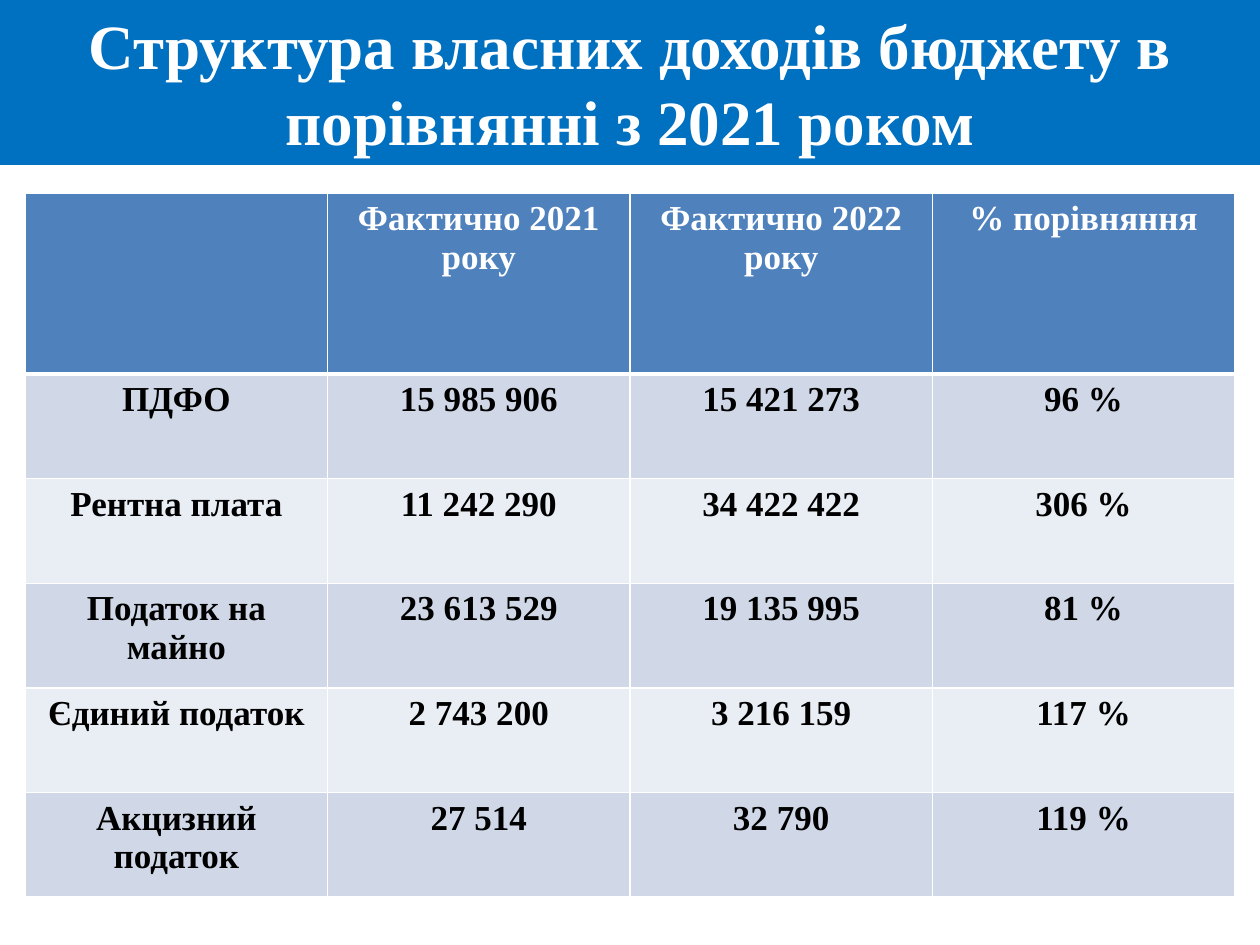
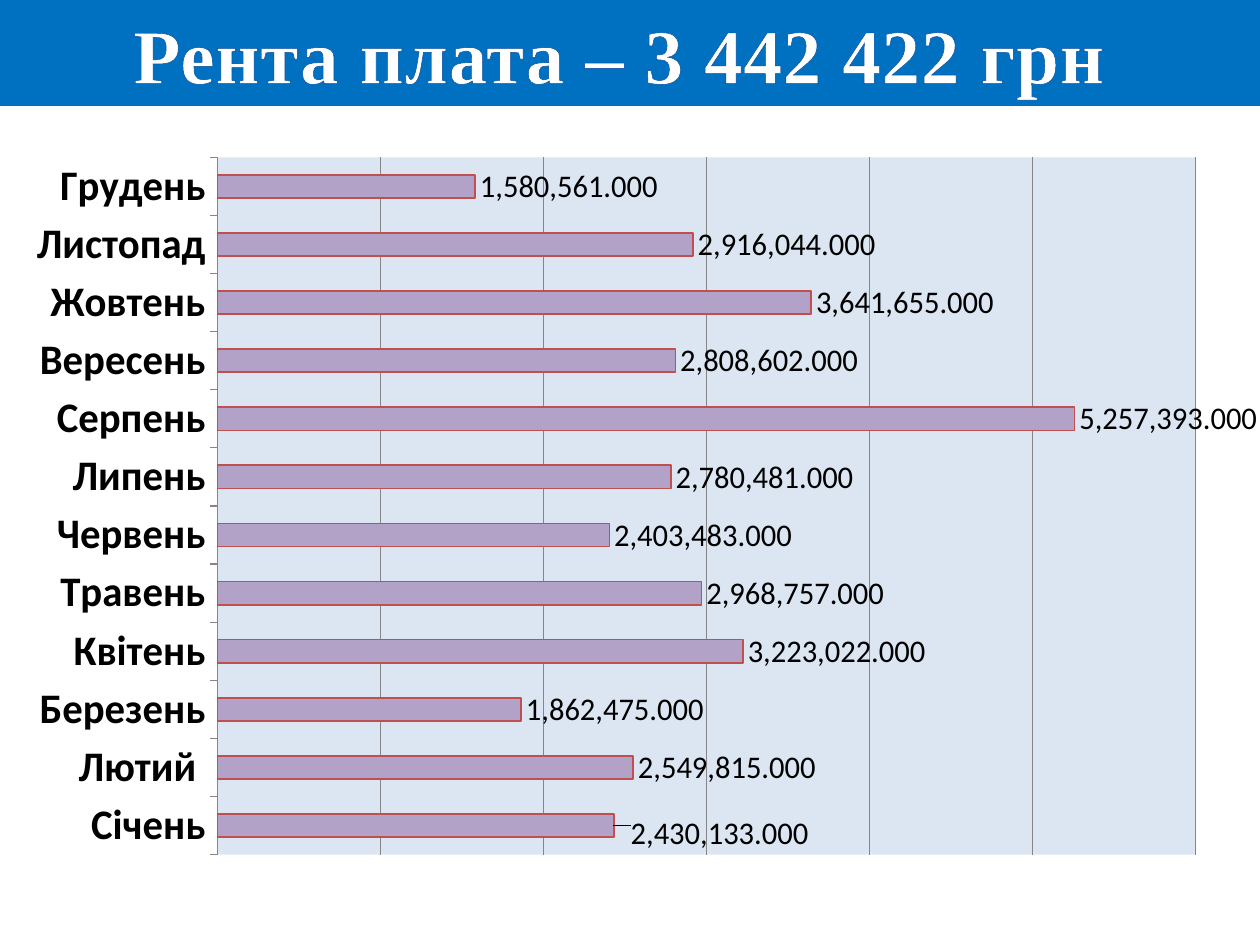
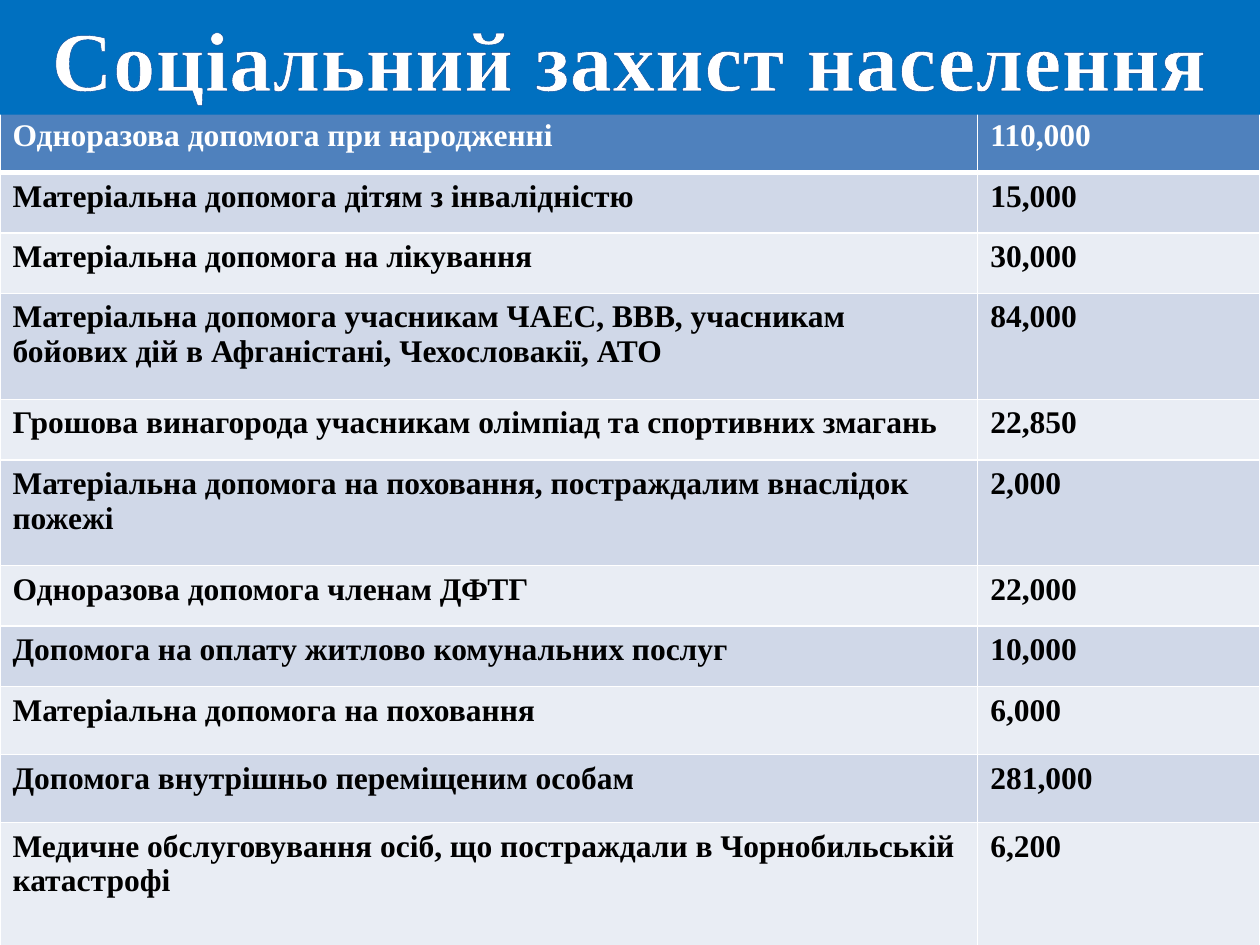
import pptx
import pptx.chart.data
import pptx.dml.color
import pptx.enum.chart
import pptx.enum.shapes
import pptx.enum.text
import pptx.oxml
import pptx.oxml.ns
import pptx.util
from pptx.util import Inches, Pt

CENTER = pptx.enum.text.PP_ALIGN.CENTER
LEFT = pptx.enum.text.PP_ALIGN.LEFT

INCOME = [
    ("", "Фактично 2021 року", "Фактично 2022 року", "% порівняння"),
    ("ПДФО", "15 985 906", "15 421 273", "96 %"),
    ("Рентна плата", "11 242 290", "34 422 422", "306 %"),
    ("Податок на майно", "23 613 529", "19 135 995", "81 %"),
    ("Єдиний податок", "2 743 200", "3 216 159", "117 %"),
    ("Акцизний податок", "27 514", "32 790", "119 %"),
]

RENT_BY_MONTH = {
    "Січень": 2430133,
    "Лютий ": 2549815,
    "Березень": 1862475,
    "Квітень": 3223022,
    "Травень": 2968757,
    "Червень": 2403483,
    "Липень": 2780481,
    "Серпень": 5257393,
    "Вересень": 2808602,
    "Жовтень": 3641655,
    "Листопад": 2916044,
    "Грудень": 1580561,
}

SOCIAL_AID = [
    ("Одноразова допомога при народженні", "110,000"),
    ("Матеріальна допомога дітям з інвалідністю", "15,000"),
    ("Матеріальна допомога на лікування", "30,000"),
    ("Матеріальна допомога учасникам ЧАЕС, ВВВ, учасникам бойових дій "
     "в Афганістані, Чехословакії, АТО", "84,000"),
    ("Грошова винагорода учасникам олімпіад та спортивних змагань", "22,850"),
    ("Матеріальна допомога на поховання, постраждалим внаслідок пожежі", "2,000"),
    ("Одноразова допомога членам ДФТГ", "22,000"),
    ("Допомога на оплату житлово комунальних послуг", "10,000"),
    ("Матеріальна допомога на поховання", "6,000"),
    ("Допомога внутрішньо переміщеним особам", "281,000"),
    ("Медичне обслуговування осіб, що постраждали в Чорнобильській катастрофі",
     "6,200"),
]


def rgb(hex_color):
    return pptx.dml.color.RGBColor.from_string(hex_color)


def xml(tag, body="", attributes=""):
    """Return a DrawingML or chart element with its namespaces declared."""
    namespaces = pptx.oxml.ns.nsdecls("a", "c")
    return pptx.oxml.parse_xml(f"<{tag} {namespaces} {attributes}>{body}</{tag}>")


def solid(color):
    return f'<a:solidFill><a:srgbClr val="{color}"/></a:solidFill>'


def manual_layout(inner=False, **fractions):
    """Return a chart layout; x, y, w and h are fractions of the chart."""
    body = ""
    if inner:
        body = '<c:layoutTarget val="inner"/><c:xMode val="edge"/><c:yMode val="edge"/>'
    body += "".join(f'<c:{key} val="{value}"/>' for key, value in fractions.items())
    return xml("c:layout", f"<c:manualLayout>{body}</c:manualLayout>")


class Deck:
    SERIF, SANS = "Times New Roman", "Calibri"
    WHITE, BLACK, BAND, OUTLINE = "FFFFFF", "000000", "0070C0", "054697"
    HEADER, STRIPES = "4F81BD", ("D0D8E8", "E9EDF4")
    PLOT, BAR, BAR_EDGE, GRID = "DCE6F2", "B3A2C7", "C0504D", "868686"
    NUMBERS = "#,##0.000"

    def __init__(self):
        self.presentation = pptx.Presentation()
        self.presentation.slide_width = Inches(10)
        self.presentation.slide_height = Inches(7.5)
        self.slide = None

    def new_slide(self):
        self.slide = self.presentation.slides.add_slide(
            self.presentation.slide_layouts[6])

    def style(self, font, size, color, name=SERIF, bold=True):
        font.name, font.size, font.bold = name, Pt(size), bold
        font.color.rgb = rgb(color)

    def add_text(self, frame, text, size, color, align):
        paragraph = frame.paragraphs[0]
        paragraph.alignment = align
        run = paragraph.add_run()
        run.text = text
        self.style(run.font, size, color)
        return run

    def title(self, text, height, size, outlined=False):
        band = self.slide.shapes.add_shape(
            pptx.enum.shapes.MSO_SHAPE.RECTANGLE, 0, 0, Inches(10), Inches(height))
        band.shadow.inherit = False
        band.fill.solid()
        band.fill.fore_color.rgb = rgb(self.BAND)
        band.line.fill.background()
        frame = band.text_frame
        frame.word_wrap = True
        frame.auto_size = pptx.enum.text.MSO_AUTO_SIZE.SHAPE_TO_FIT_TEXT
        run = self.add_text(frame, text, size, self.WHITE, CENTER)
        if outlined:
            properties = run._r.get_or_add_rPr()
            properties.set("spc", "50")
            properties.insert(0, xml("a:ln", solid(self.OUTLINE), 'w="12700"'))

    def table(self, rows, left, top, widths, heights, size, align):
        grid = self.slide.shapes.add_table(
            len(rows), len(widths), Inches(left), Inches(top),
            Inches(sum(widths)), Inches(sum(heights))).table
        for column, width in zip(grid.columns, widths):
            column.width = Inches(width)
        for index, (row, height, texts) in enumerate(zip(grid.rows, heights, rows)):
            row.height = Inches(height)
            fill = self.STRIPES[(index - 1) % 2] if index else self.HEADER
            color = self.BLACK if index else self.WHITE
            for cell, text in zip(row.cells, texts):
                if text:
                    self.add_text(cell.text_frame, text, size, color, align)
                self.borders(cell, top=3 if index == 1 else 1,
                             bottom=1 if index else 3)
                cell.fill.solid()
                cell.fill.fore_color.rgb = rgb(fill)

    def borders(self, cell, top, bottom):
        properties = cell._tc.get_or_add_tcPr()
        for side, width in (("L", 1), ("R", 1), ("T", top), ("B", bottom)):
            properties.append(
                xml(f"a:ln{side}", solid(self.WHITE), f'w="{Pt(width)}"'))

    def bar_chart(self, values, left, top, width, height):
        data = pptx.chart.data.CategoryChartData()
        data.categories = list(values)
        data.add_series("Series 1", list(values.values()))
        chart = self.slide.shapes.add_chart(
            pptx.enum.chart.XL_CHART_TYPE.BAR_CLUSTERED, Inches(left), Inches(top),
            Inches(width), Inches(height), data).chart
        chart.has_title = chart.has_legend = False
        self.style(chart.font, 18, self.BLACK, self.SANS, False)

        months = chart.category_axis
        self.style(months.tick_labels.font, 24, self.BLACK, self.SANS)
        months.format.line.color.rgb = rgb(self.GRID)
        amounts = chart.value_axis
        amounts.visible = False
        amounts.minimum_scale, amounts.maximum_scale = 0, 6000000
        amounts.major_unit = 1000000
        amounts.has_major_gridlines = True
        amounts.major_gridlines.format.line.color.rgb = rgb(self.GRID)

        plot = chart.plots[0]
        plot.gap_width = 150
        plot.vary_by_categories = False
        bars = plot.series[0]
        bars.format.fill.solid()
        bars.format.fill.fore_color.rgb = rgb(self.BAR)
        bars.format.line.color.rgb = rgb(self.BAR_EDGE)
        bars.format.line.width = Pt(1)
        self.value_labels(bars)

        area = chart._chartSpace.chart.plotArea
        for layout in area.findall(pptx.oxml.ns.qn("c:layout")):
            area.remove(layout)
        area.insert(0, manual_layout(inner=True, x=0.18, y=0.06, w=0.8, h=0.9))
        area.append(xml("c:spPr", solid(self.PLOT)))

    def value_labels(self, bars):
        """Label every bar; the first label stands a little off its bar."""
        outside = pptx.enum.chart.XL_LABEL_POSITION.OUTSIDE_END
        labels = bars.data_labels
        labels.show_value = True
        labels.number_format = self.NUMBERS
        labels.number_format_is_linked = False
        labels.position = outside
        self.style(labels.font, 18, self.BLACK, self.SANS, False)

        first = bars.points[0].data_label
        first.position = outside
        self.style(first.font, 18, self.BLACK, self.SANS, False)
        element = labels._element.find(pptx.oxml.ns.qn("c:dLbl"))
        element.insert(1, manual_layout(x=0.01, y=0.01))
        element.insert(2, xml("c:numFmt", attributes=(
            f'formatCode="{self.NUMBERS}" sourceLinked="0"')))


def main():
    deck = Deck()

    deck.new_slide()
    deck.title("Структура власних доходів бюджету в порівнянні з 2021 роком", 1.31, 36)
    deck.table(INCOME, 0.2, 1.53, [2.4] * 4, [1.44] + [0.83] * 5, 20, CENTER)

    deck.new_slide()
    deck.bar_chart(RENT_BY_MONTH, -0.02, 0.88, 10, 6.15)
    deck.title("Рента плата – 3 442 422 грн ", 0.84, 44, outlined=True)

    deck.new_slide()
    heights = [0.48, 0.48, 0.48, 0.84, 0.48, 0.84, 0.48, 0.48, 0.54, 0.54, 0.99]
    deck.table(SOCIAL_AID, 0, 0.89, [7.76, 2.24], heights, 18, LEFT)
    deck.title("Соціальний захист населення", 0.91, 48, outlined=True)

    deck.presentation.save("out.pptx")


if __name__ == "__main__":
    main()
